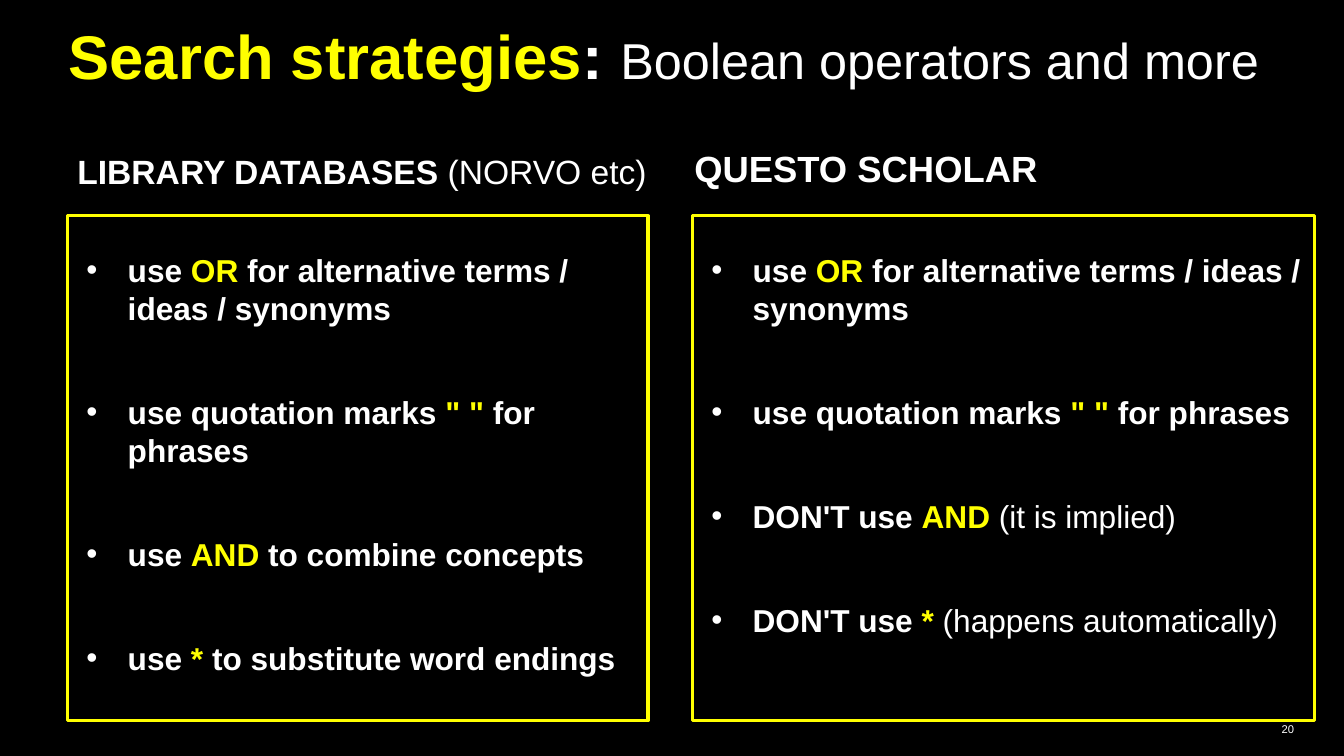
from lxml import etree
from pptx import Presentation
from pptx.dml.color import RGBColor
from pptx.enum.shapes import MSO_SHAPE
from pptx.enum.text import MSO_ANCHOR, MSO_AUTO_SIZE, PP_ALIGN
from pptx.oxml.ns import qn
from pptx.util import Pt

RECTANGLE = MSO_SHAPE.RECTANGLE
TOP, MIDDLE, BOTTOM = MSO_ANCHOR.TOP, MSO_ANCHOR.MIDDLE, MSO_ANCHOR.BOTTOM
NO_AUTOFIT = MSO_AUTO_SIZE.NONE
LEFT, RIGHT = PP_ALIGN.LEFT, PP_ALIGN.RIGHT

COLORS = {"black": "000000", "white": "FFFFFF", "yellow": "FFFF00"}
FONT = "Arial"
BODY_SIZE = 22.6
LINE_HEIGHT = 27.1
BULLET_GAP = 47.1


def set_frame(shape, anchor, top, bottom):
    """Fix the wrapping, anchor and vertical insets of a shape's text."""
    frame = shape.text_frame
    frame.word_wrap = True
    frame.auto_size = NO_AUTOFIT
    frame.vertical_anchor = anchor
    frame.margin_left = frame.margin_right = Pt(7.2)
    frame.margin_top, frame.margin_bottom = Pt(top), Pt(bottom)
    return frame


def add_spans(para, spans, align=LEFT):
    """Fill a paragraph from (text, size, color, bold) spans."""
    para.alignment = align
    for text, size, color, bold in spans:
        span = para.add_run()
        span.text = text
        span.font.name = FONT
        span.font.size = Pt(size)
        span.font.bold = bold
        span.font.color.rgb = RGBColor.from_string(COLORS[color])


deck = Presentation()
deck.slide_width, deck.slide_height = Pt(960), Pt(540)
page = deck.slides.add_slide(deck.slide_layouts[5])
page.background.fill.solid()
page.background.fill.fore_color.rgb = RGBColor.from_string(COLORS["black"])

# Title
title = page.shapes.title
title.left, title.top, title.width, title.height = Pt(41.8), Pt(0), Pt(889.9), Pt(69.8)
title_para = set_frame(title, BOTTOM, 3.6, 3.6).paragraphs[0]
title_para.line_spacing = 0.9
add_spans(title_para, [
    ("Search strategies", 44, "yellow", True),
    (": ", 44, "white", True),
    ("Boolean operators and more", 36, "white", False),
])

# Column headings and page number: left, top, width, height, anchor, inset, align, spans
labels = [
    (48.2, 100.8, 428.4, 40.3, TOP, 7.2, LEFT,
     [("LIBRARY DATABASES ", 24, "white", True), ("(NORVO etc)", 24, "white", False)]),
    (488.9, 97.2, 343.4, 40.3, TOP, 7.2, LEFT, [("QUESTO SCHOLAR", 26, "white", True)]),
    (897.8, 506.2, 33.8, 28.8, MIDDLE, 3.6, RIGHT, [("20", 8, "white", False)]),
]
for left, top, width, height, anchor, inset, align, spans in labels:
    box = page.shapes.add_textbox(Pt(left), Pt(top), Pt(width), Pt(height))
    add_spans(set_frame(box, anchor, inset, inset).paragraphs[0], spans, align)

# Bulleted panels: each tip is lead, highlighted term, rest, and whether the rest is bold
shared_tips = [
    ("use ", "OR", " for alternative terms / ideas / synonyms", True),
    ("use quotation marks ", '" "', " for phrases", True),
]
panels = [
    (48.2, 414.7, shared_tips + [
        ("use ", "AND", " to combine concepts", True),
        ("use ", "*", " to substitute word endings", True),
    ]),
    (494.6, 444.2, shared_tips + [
        ("DON'T use ", "AND", " (it is implied)", False),
        ("DON'T use ", "*", " (happens automatically)", False),
    ]),
]
for left, width, tips in panels:
    panel = page.shapes.add_shape(RECTANGLE, Pt(left), Pt(154.1), Pt(width), Pt(360.7))
    panel.shadow.inherit = False
    panel.fill.background()
    panel.line.color.rgb = RGBColor.from_string(COLORS["yellow"])
    panel.line.width = Pt(2.25)
    frame = set_frame(panel, TOP, 25.2, 3.6)
    for index, (lead, term, rest, rest_bold) in enumerate(tips):
        para = frame.add_paragraph() if index else frame.paragraphs[0]
        para.line_spacing = Pt(LINE_HEIGHT)
        para.space_before = Pt(BULLET_GAP if index else 0)
        add_spans(para, [
            (lead, BODY_SIZE, "white", True),
            (term, BODY_SIZE, "yellow", True),
            (rest, BODY_SIZE, "white", rest_bold),
        ])
        properties = para._p.get_or_add_pPr()
        properties.set("marL", str(Pt(36)))
        properties.set("indent", str(Pt(-29.5)))
        bullet_color = etree.SubElement(properties, qn("a:buClr"))
        etree.SubElement(bullet_color, qn("a:srgbClr"), val=COLORS["white"])
        etree.SubElement(properties, qn("a:buFont"), typeface=FONT)
        etree.SubElement(properties, qn("a:buChar"), char="•")

deck.save("out.pptx")
